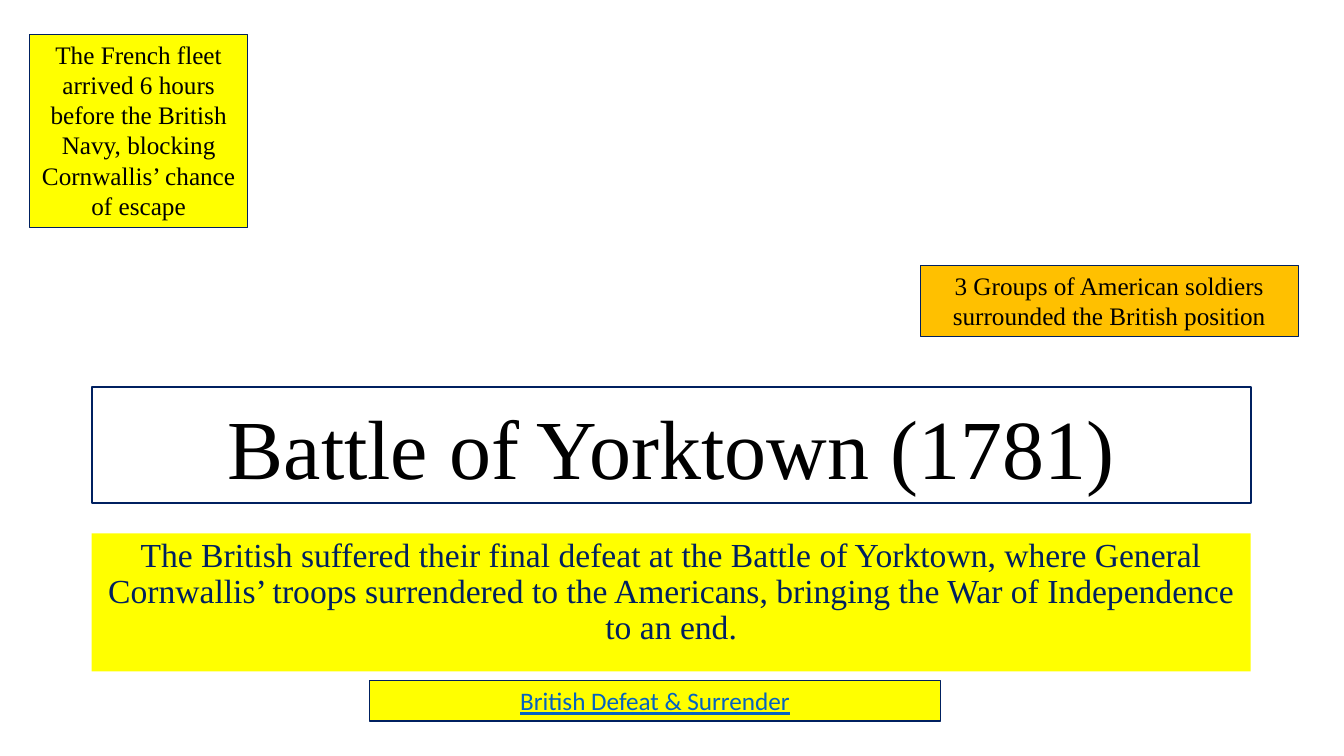
import pptx
import pptx.util
import pptx.dml.color
import pptx.enum.text
from pptx.util import Cm, Pt

SERIF, SANS = "Times New Roman", "Calibri"
NAVY, BLACK, WHITE = "002060", "000000", "FFFFFF"
YELLOW, ORANGE, LINK_BLUE = "FFFF00", "FFC000", "0563C1"

# Content: text, place in cm (left, top, width, height), fill, font, size, colour
BATTLE = ("Battle of Yorktown (1781)",
          (2.31, 9.75, 29.21, 2.92), WHITE, SERIF, 60, BLACK)
SUMMARY = ("The British suffered their final defeat at the Battle of Yorktown, "
           "where General Cornwallis’ troops surrendered to the Americans, "
           "bringing the War of Independence to an end.",
           (2.31, 13.44, 29.21, 3.48), YELLOW, SERIF, 24, NAVY)
SURRENDER = ("British Defeat & Surrender",
             (9.32, 17.15, 14.38, 1.02), YELLOW, SANS, 18, LINK_BLUE)
FLEET = ("The French fleet arrived 6 hours before the British Navy, "
         "blocking Cornwallis’ chance of escape",
         (0.74, 0.86, 5.51, 4.88), YELLOW, SERIF, 18, BLACK)
SOLDIERS = ("3 Groups of American soldiers surrounded the British position",
            (23.19, 6.68, 9.53, 1.8), ORANGE, SERIF, 18, BLACK)


def rgb(value):
    return pptx.dml.color.RGBColor.from_string(value)


def fill_box(box, content, border=0.75, spacing=1.0,
             anchor=pptx.enum.text.MSO_ANCHOR.TOP):
    """Place the box, then set its text, fill and border."""
    text, place, fill, font, size, colour = content
    box.left, box.top, box.width, box.height = map(Cm, place)
    box.fill.solid()
    box.fill.fore_color.rgb = rgb(fill)
    if border:
        box.line.color.rgb = rgb(NAVY)
        box.line.width = Pt(border)

    frame = box.text_frame
    frame.word_wrap = True
    frame.auto_size = pptx.enum.text.MSO_AUTO_SIZE.NONE
    frame.vertical_anchor = anchor
    frame.text = text
    paragraph = frame.paragraphs[0]
    paragraph.alignment = pptx.enum.text.PP_ALIGN.CENTER
    paragraph.line_spacing = spacing
    run = paragraph.runs[0]
    run.font.name = font
    run.font.size = Pt(size)
    run.font.color.rgb = rgb(colour)
    return run


def main():
    deck = pptx.Presentation()
    deck.slide_width, deck.slide_height = Cm(33.87), Cm(19.05)
    slide = deck.slides.add_slide(deck.slide_layouts[5])

    def add_box():
        return slide.shapes.add_textbox(0, 0, 0, 0)

    # Title and summary
    fill_box(slide.shapes.title, BATTLE, border=1.5, spacing=0.9,
             anchor=pptx.enum.text.MSO_ANCHOR.BOTTOM)
    fill_box(add_box(), SUMMARY, border=0, spacing=0.9)

    # Captions
    surrender = fill_box(add_box(), SURRENDER)
    surrender.font.underline = True
    for caption in (FLEET, SOLDIERS):
        fill_box(add_box(), caption)

    deck.save("out.pptx")


if __name__ == "__main__":
    main()
